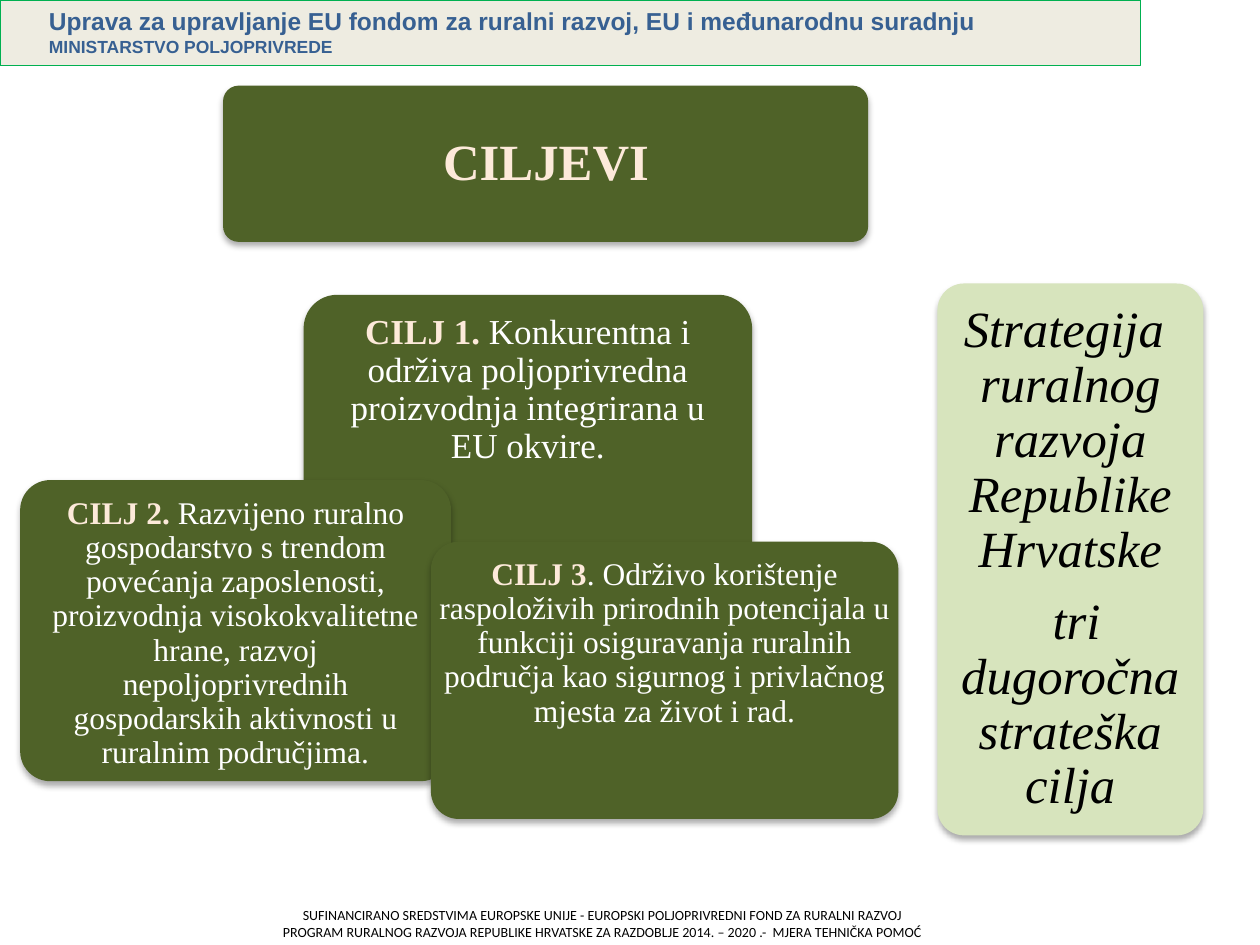
from dataclasses import dataclass

from lxml.etree import SubElement
from pptx import Presentation
from pptx.dml.color import RGBColor
from pptx.enum.shapes import MSO_SHAPE as Preset
from pptx.enum.text import MSO_ANCHOR as Anchor, MSO_AUTO_SIZE as AutoSize, PP_ALIGN as Align
from pptx.oxml.ns import qn
from pptx.util import Inches, Pt

COLUMNS, ROWS = 100, 75
TITLE_ONLY = 5


@dataclass(frozen=True)
class Theme:
    dark_green: str = "4F6228"
    pale_green: str = "D7E4BD"
    border_green: str = "00B050"
    beige: str = "EEECE1"
    blue: str = "376092"
    cream: str = "FDEADA"
    white: str = "FFFFFF"
    black: str = "000000"
    serif: str = "Times New Roman"
    header_font: str = "Arial"
    footer_font: str = "Calibri"
    display: float = 29
    goal_large: float = 20
    goal: float = 18
    header: float = 14
    subheader: float = 10
    footer: float = 8


@dataclass(frozen=True)
class Run:
    text: str
    size: float
    color: str
    font: str = Theme.serif
    bold: bool = False
    italic: bool = False


class SlideBuilder:
    def __init__(self, presentation, theme):
        self.theme = theme
        self.cell_width = presentation.slide_width / COLUMNS
        self.cell_height = presentation.slide_height / ROWS
        self.slide = presentation.slides.add_slide(presentation.slide_layouts[TITLE_ONLY])

    def box(self, left, top, width, height):
        """Turn columns and rows into slide lengths."""
        return (round(left * self.cell_width), round(top * self.cell_height),
                round(width * self.cell_width), round(height * self.cell_height))

    def set_text(self, shape, paragraphs, insets=(0.1, 0.05), anchor=Anchor.TOP, align=Align.CENTER):
        """Fill a shape with lists of runs and return its paragraphs."""
        frame = shape.text_frame
        frame.word_wrap = True
        frame.auto_size = AutoSize.NONE
        frame.vertical_anchor = anchor
        frame.margin_left = frame.margin_right = Inches(insets[0])
        frame.margin_top = frame.margin_bottom = Inches(insets[1])
        for index, runs in enumerate(paragraphs):
            paragraph = frame.add_paragraph() if index else frame.paragraphs[0]
            paragraph.alignment = align
            for item in runs:
                run = paragraph.add_run()
                run.text = item.text
                font = run.font
                font.name, font.size = item.font, Pt(item.size)
                font.bold, font.italic = item.bold, item.italic
                font.color.rgb = RGBColor.from_string(item.color)
        return frame.paragraphs

    def set_serif_text(self, shape, paragraphs, insets, anchor):
        for paragraph in self.set_text(shape, paragraphs, insets, anchor):
            paragraph.line_spacing = 0.9
            paragraph.space_before = Pt(0)
            paragraph.space_after = Pt(round(0.35 * paragraph.runs[0].font.size.pt, 1))

    def panel(self, preset, area, fill):
        shape = self.slide.shapes.add_shape(preset, *self.box(*area))
        shape.shadow.inherit = False
        shape.fill.solid()
        shape.fill.fore_color.rgb = RGBColor.from_string(fill)
        shape.line.fill.background()
        return shape

    def card(self, area, fill, paragraphs=(), insets=(0.12, 0.12), anchor=Anchor.TOP):
        shape = self.panel(Preset.ROUNDED_RECTANGLE, area, fill)
        shape.adjustments[0] = 0.1
        effects = shape.element.spPr.find(qn("a:effectLst"))
        shadow = SubElement(effects, qn("a:outerShdw"), blurRad=str(Pt(3.5)), dist=str(Pt(2.2)),
                            dir="5400000", rotWithShape="0")
        color = SubElement(shadow, qn("a:srgbClr"), val=self.theme.black)
        SubElement(color, qn("a:alpha"), val="32000")
        if paragraphs:
            self.set_serif_text(shape, paragraphs, insets, anchor)

    def title(self, area, run):
        """Place the title placeholder in front of what is already drawn."""
        title = self.slide.shapes.title
        title.left, title.top, title.width, title.height = self.box(*area)
        self.set_serif_text(title, [[run]], (0.12, 0.12), Anchor.MIDDLE)
        title.element.getparent().append(title.element)

    def header(self, area, paragraphs):
        shape = self.panel(Preset.RECTANGLE, area, self.theme.beige)
        shape.line.color.rgb = RGBColor.from_string(self.theme.border_green)
        shape.line.width = Pt(0.75)
        for paragraph in self.set_text(shape, paragraphs, align=Align.LEFT):
            properties = paragraph._p.get_or_add_pPr()
            properties.set("marL", str(Inches(0.29)))
            properties.set("indent", "0")

    def footer(self, area, paragraphs):
        shape = self.slide.shapes.add_textbox(*self.box(*area))
        for index, paragraph in enumerate(self.set_text(shape, paragraphs)):
            paragraph.line_spacing = Pt(8)
            paragraph.space_before = Pt(1.6 if index else 0)


def main():
    presentation = Presentation()
    presentation.slide_width, presentation.slide_height = Inches(10), Inches(7.5)
    theme = Theme()
    builder = SlideBuilder(presentation, theme)

    header_lines = (
        ("Uprava za upravljanje EU fondom za ruralni razvoj, EU i međunarodnu suradnju", theme.header),
        ("MINISTARSTVO POLJOPRIVREDE", theme.subheader),
    )
    builder.header((0, 0, 90.5, 5.2), [
        [Run(text, size, theme.blue, theme.header_font, bold=True)] for text, size in header_lines])

    footer_lines = (
        "SUFINANCIRANO SREDSTVIMA EUROPSKE UNIJE - EUROPSKI POLJOPRIVREDNI FOND ZA RURALNI RAZVOJ",
        "PROGRAM RURALNOG RAZVOJA REPUBLIKE HRVATSKE ZA RAZDOBLJE 2014. – 2020 .-  MJERA TEHNIČKA POMOĆ",
    )
    builder.footer((12.8, 71.7, 70.1, 3), [
        [Run(text, theme.footer, theme.black, theme.footer_font)] for text in footer_lines])

    builder.card((17.7, 6.8, 51.2, 12.4), theme.dark_green)
    builder.title((18.1, 7.2, 50.5, 11.7), Run("CILJEVI", theme.display, theme.cream, bold=True))

    goals = (
        ((24.1, 23.4, 35.6, 26.6), (0.08, 0.08), theme.goal_large, "CILJ 1. ",
         "Konkurentna i održiva poljoprivredna proizvodnja integrirana u EU okvire."),
        ((1.6, 38.1, 34.2, 23.9), (0.07, 0.07), theme.goal, "CILJ 2. ",
         "Razvijeno ruralno gospodarstvo s trendom povećanja zaposlenosti, proizvodnja "
         "visokokvalitetne hrane, razvoj nepoljoprivrednih gospodarskih aktivnosti u "
         "ruralnim područjima."),
        ((34.2, 43, 37.1, 22), (0, 0.07), theme.goal, "CILJ 3",
         ". Održivo korištenje raspoloživih prirodnih potencijala u funkciji osiguravanja "
         "ruralnih područja kao sigurnog i privlačnog mjesta za život i rad."),
    )
    for area, insets, size, label, text in goals:
        runs = [Run(label, size, theme.cream, bold=True), Run(text, size, theme.white)]
        builder.card(area, theme.dark_green, [runs], insets)

    strategy = ("Strategija  ruralnog razvoja Republike Hrvatske", " tri dugoročna strateška cilja")
    builder.card((74.4, 22.5, 21.1, 43.8), theme.pale_green, [
        [Run(text, theme.display, theme.black, italic=True)] for text in strategy],
        anchor=Anchor.MIDDLE)

    presentation.save("out.pptx")


if __name__ == "__main__":
    main()
